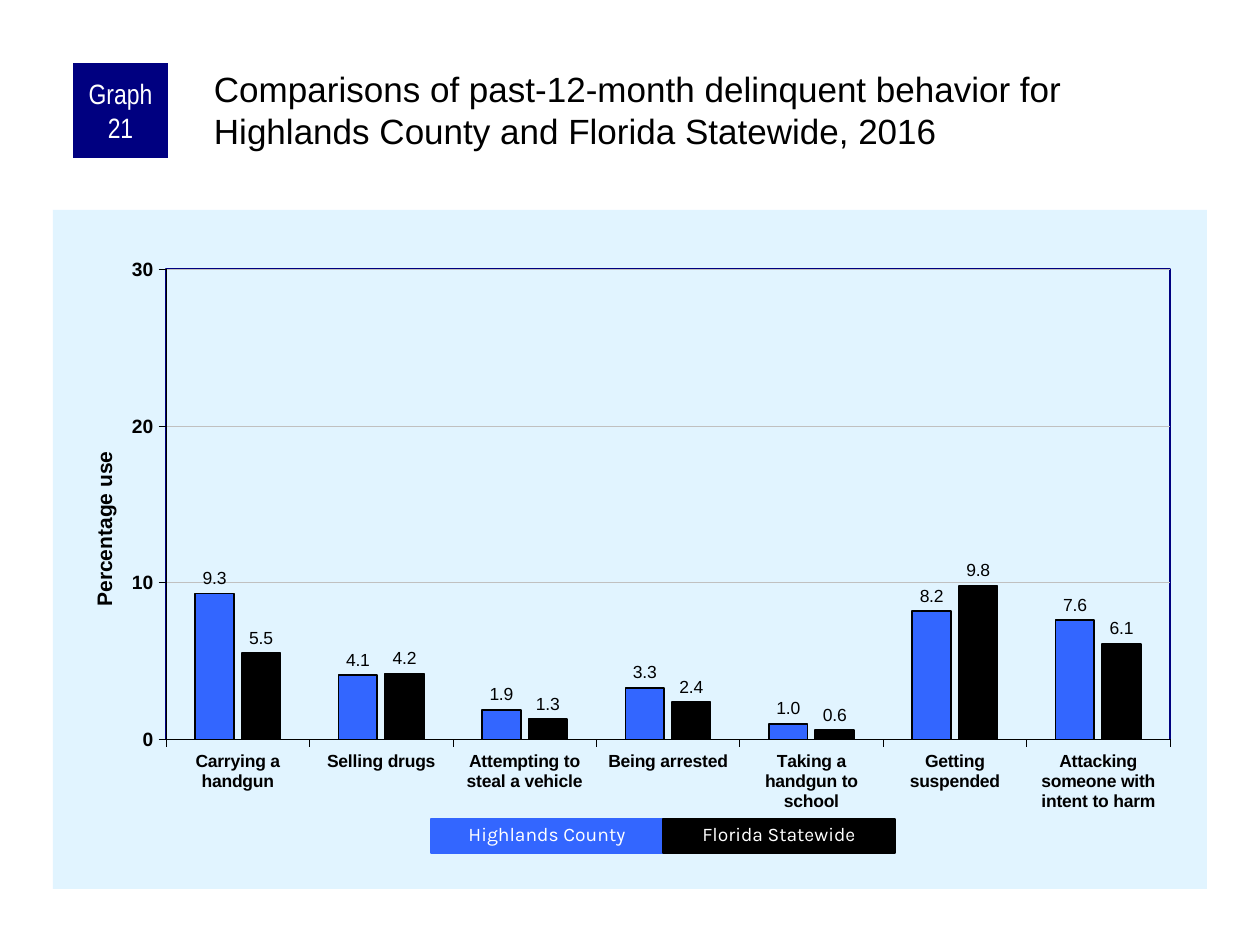
from dataclasses import dataclass

from lxml import etree
from pptx import Presentation
from pptx.chart.data import CategoryChartData
from pptx.dml.color import RGBColor
from pptx.enum.chart import XL_CHART_TYPE, XL_LABEL_POSITION, XL_TICK_MARK
from pptx.enum.shapes import MSO_SHAPE
from pptx.enum.text import MSO_ANCHOR, PP_ALIGN
from pptx.oxml import parse_xml
from pptx.oxml.ns import nsdecls, qn
from pptx.util import Pt

CLUSTERED = XL_CHART_TYPE.COLUMN_CLUSTERED
OUTSIDE_END = XL_LABEL_POSITION.OUTSIDE_END
TICK_OUT = XL_TICK_MARK.OUTSIDE
TICK_NONE = XL_TICK_MARK.NONE
RECTANGLE = MSO_SHAPE.RECTANGLE
TOP, MIDDLE = MSO_ANCHOR.TOP, MSO_ANCHOR.MIDDLE
LEFT, CENTER = PP_ALIGN.LEFT, PP_ALIGN.CENTER

EMU_PER_PX = 914400 / 126


@dataclass(frozen=True)
class Theme:
    black: str = "000000"
    white: str = "FFFFFF"
    navy: str = "000080"
    blue: str = "3366FF"
    pale: str = "E1F4FF"
    grid: str = "C0C0C0"
    body_font: str = "Arial"
    badge_font: str = "Arial Narrow"
    legend_font: str = "Karla"
    heading_size: float = 20
    badge_size: float = 16
    axis_title_size: float = 12
    chart_size: float = 11.5
    value_size: float = 11
    legend_size: float = 11
    label_size: float = 10


THEME = Theme()

CATEGORIES = [
    "Carrying a handgun", "Selling drugs", "Attempting to steal a vehicle",
    "Being arrested", "Taking a handgun to school", "Getting suspended",
    "Attacking someone with intent to harm",
]
SERIES = [
    ("Highlands County", THEME.blue, (9.3, 4.1, 1.9, 3.3, 1.0, 8.2, 7.6)),
    ("Florida Statewide", THEME.black, (5.5, 4.2, 1.3, 2.4, 0.6, 9.8, 6.1)),
]


def px(value):
    return round(value * EMU_PER_PX)


def rgb(color):
    return RGBColor.from_string(color)


def style_font(font, size, color=THEME.black, name=THEME.body_font, bold=False):
    font.size, font.name, font.bold = Pt(size), name, bold
    font.color.rgb = rgb(color)


def style_line(line, color, width):
    line.color.rgb = rgb(color)
    line.width = Pt(width)


def write_text(box, text, size, color, name, align=LEFT, anchor=TOP,
               insets=(13, 6, 13, 6), spacing=None):
    frame = box.text_frame
    frame.word_wrap = True
    frame.vertical_anchor = anchor
    (frame.margin_left, frame.margin_top,
     frame.margin_right, frame.margin_bottom) = map(px, insets)
    para = frame.paragraphs[0]
    para.alignment = align
    para.line_spacing = spacing
    span = para.add_run()
    span.text = text
    style_font(span.font, size, color, name)


def add_block(page, bounds, color, outlined=False):
    box = page.shapes.add_shape(RECTANGLE, *map(px, bounds))
    box.shadow.inherit = False
    box.fill.solid()
    box.fill.fore_color.rgb = rgb(color)
    if outlined:
        style_line(box.line, color, 0.75)
    else:
        box.line.fill.background()
    return box


def area_format(fill=None, line=None, width=1):
    """Return chart spPr XML, with no fill or no line where a colour is missing."""
    def paint(color):
        if color is None:
            return "<a:noFill/>"
        return f'<a:solidFill><a:srgbClr val="{color}"/></a:solidFill>'

    return parse_xml(f'<c:spPr {nsdecls("c", "a")}>{paint(fill)}'
                     f'<a:ln w="{Pt(width)}">{paint(line)}</a:ln></c:spPr>')


def manual_layout(x, y, width=None, height=None):
    """Return a chart layout in fractions of the chart; a size means the inner plot."""
    layout = etree.Element(qn("c:layout"))
    manual = etree.SubElement(layout, qn("c:manualLayout"))
    settings = [("xMode", "edge"), ("yMode", "edge"), ("x", x), ("y", y)]
    if width is not None:
        settings.insert(0, ("layoutTarget", "inner"))
        settings += [("w", width), ("h", height)]
    for tag, value in settings:
        etree.SubElement(manual, qn(f"c:{tag}")).set("val", str(value))
    return layout


def replace_layout(parent, layout, index):
    for old in parent.findall(qn("c:layout")):
        parent.remove(old)
    parent.insert(index, layout)


def style_axis(axis, size):
    axis.major_tick_mark = TICK_OUT
    axis.minor_tick_mark = TICK_NONE
    style_font(axis.tick_labels.font, size, bold=True)
    style_line(axis.format.line, THEME.black, 0.25)


def style_value_axis(axis):
    style_axis(axis, THEME.value_size)
    axis.minimum_scale, axis.maximum_scale, axis.major_unit = 0, 30, 10
    axis.has_major_gridlines = True
    style_line(axis.major_gridlines.format.line, THEME.grid, 0.25)
    span = axis.axis_title.text_frame.paragraphs[0].add_run()
    span.text = "Percentage use"
    style_font(span.font, THEME.axis_title_size, bold=True)
    replace_layout(axis.axis_title._element, manual_layout(0.03, 0.35), 1)


def style_series(series, color):
    series.format.fill.solid()
    series.format.fill.fore_color.rgb = rgb(color)
    series.invert_if_negative = False
    style_line(series.format.line, THEME.black, 1)
    labels = series.data_labels
    labels.show_value = True
    labels.number_format = "0.0"
    labels.number_format_is_linked = False
    labels.position = OUTSIDE_END
    style_font(labels.font, THEME.label_size)


def add_behavior_chart(page):
    data = CategoryChartData()
    data.categories = CATEGORIES
    for name, _, values in SERIES:
        data.add_series(name, values)
    bounds = map(px, (53, 210, 1154, 679))
    chart = page.shapes.add_chart(CLUSTERED, *bounds, data).chart
    chart.has_legend = chart.has_title = False
    style_font(chart.font, THEME.chart_size)
    style_axis(chart.category_axis, THEME.label_size)
    style_value_axis(chart.value_axis)
    plot = chart.plots[0]
    plot.vary_by_categories = False
    plot.gap_width, plot.overlap = 150, -20
    for series, (_, color, _) in zip(plot.series, SERIES):
        style_series(series, color)
    chart_root = chart._chartSpace.find(qn("c:chart"))
    chart_root.addnext(area_format(fill=THEME.pale))
    plot_area = chart_root.find(qn("c:plotArea"))
    replace_layout(plot_area, manual_layout(0.098, 0.087, 0.87, 0.693), 0)
    plot_area.append(area_format(line=THEME.navy))


def add_heading(page):
    badge = add_block(page, (73, 63, 95, 95), THEME.navy)
    write_text(badge, "Graph 21", THEME.badge_size, THEME.white, THEME.badge_font,
               CENTER, MIDDLE, insets=(6, 0, 6, 0))
    title = page.shapes.add_textbox(*map(px, (210, 63, 998, 105)))
    write_text(title, "Comparisons of past-12-month delinquent behavior for "
               "Highlands County and Florida Statewide, 2016",
               THEME.heading_size, THEME.black, THEME.body_font,
               insets=(4, 4, 0, 0))


def add_legend(page):
    left, top, width, height = 431, 819, 232, 34
    for index, (name, color, _) in enumerate(SERIES):
        key = add_block(page, (left + index * width, top, width, height), color,
                        outlined=True)
        write_text(key, name, THEME.legend_size, THEME.white, THEME.legend_font,
                   CENTER, spacing=0.9)


def main():
    deck = Presentation()
    deck.slide_width, deck.slide_height = px(1260), px(945)
    page = deck.slides.add_slide(deck.slide_layouts[6])
    add_behavior_chart(page)
    add_heading(page)
    add_legend(page)
    deck.save("out.pptx")


if __name__ == "__main__":
    main()
